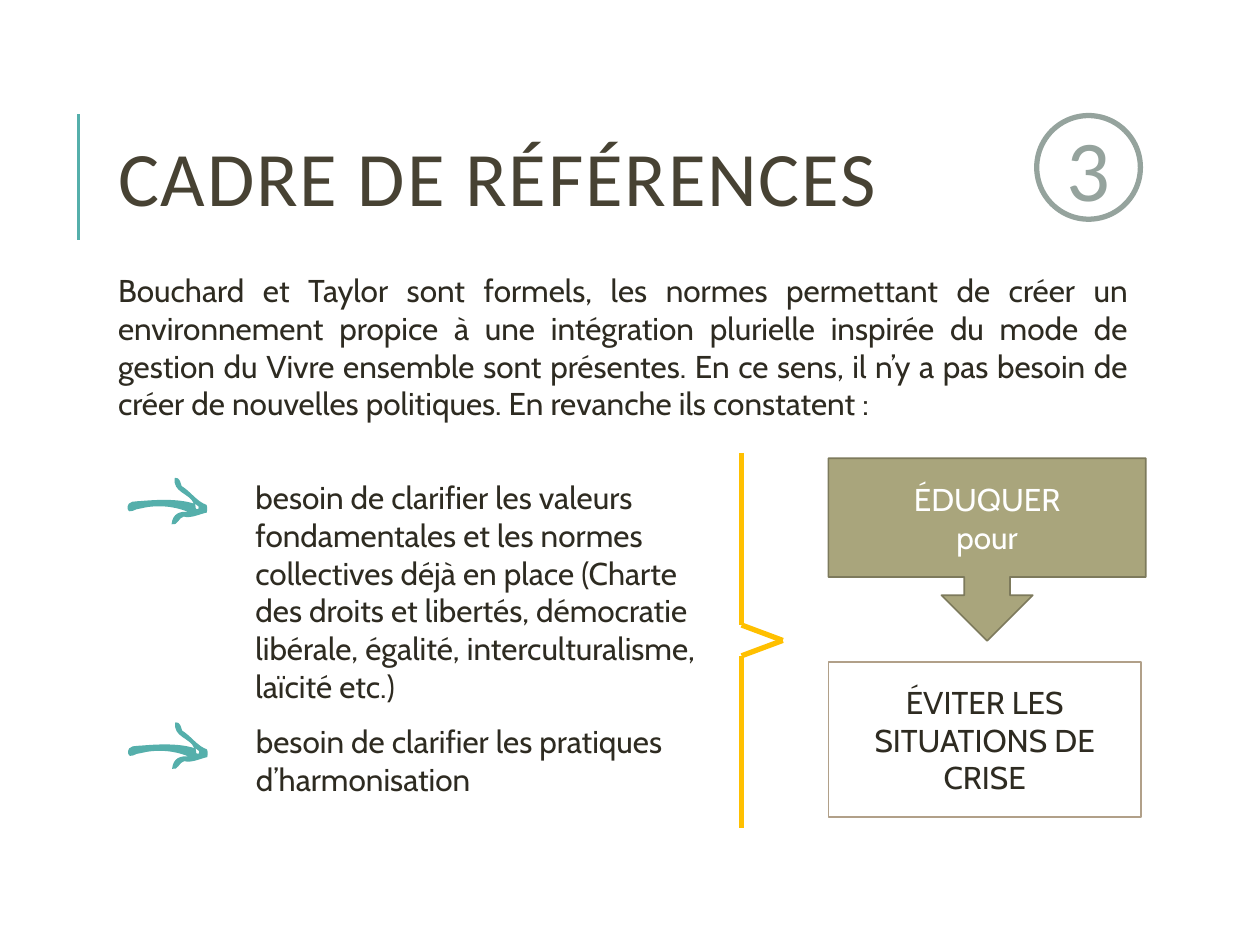
from lxml import etree
from pptx import Presentation
from pptx.dml.color import RGBColor
from pptx.enum import shapes, text
from pptx.oxml.ns import qn
from pptx.util import Cm, Pt

TEAL = RGBColor(0x55, 0xAF, 0xAB)
BROWN = RGBColor(0x47, 0x42, 0x33)
INK = RGBColor(0x2E, 0x2B, 0x21)
GREY = RGBColor(0x95, 0xA3, 0x9D)
AMBER = RGBColor(0xFF, 0xC0, 0x00)
OLIVE = RGBColor(0xA9, 0xA5, 0x7C)
DARK_OLIVE = RGBColor(0x7D, 0x7A, 0x5C)
SAND = RGBColor(0xB1, 0xA0, 0x89)
WHITE = RGBColor(0xFF, 0xFF, 0xFF)

# Hand-drawn arrow pointing up, on a grid 63 units high: each contour is a
# start point and its Bézier curves (two control points and an end point)
ARROW_HEIGHT = 63
ARROW_OUTLINE = ((25, 0), [
    ((27, 6), (31, 12), (30, 18)),
    ((31, 22), (38, 22), (37, 27)),
    ((28, 27), (26, 21), (26, 15)),
    ((22, 28), (23, 42), (27, 53)),
    ((27, 57), (33, 61), (28, 63)),
    ((21, 64), (22, 57), (21, 53)),
    ((19, 42), (16, 24), (19, 11)),
    ((11, 15), (12, 29), (0, 28)),
    ((-1, 24), (4, 23), (6, 22)),
    ((10, 14), (17, 9), (19, 1)),
    ((20, 0), (23, 0), (25, 0)),
])
ARROW_HOLE = ((19, 10), [
    ((20, 10), (22, 9), (23, 9)),
    ((23, 8), (23, 8), (23, 7)),
    ((22, 7), (21, 7), (21, 7)),
    ((21, 8), (19, 9), (19, 10)),
])


def write(sp, lines, size=18, font="Cabin", color=INK,
          align=text.PP_ALIGN.LEFT, anchor=text.MSO_ANCHOR.TOP):
    tf = sp.text_frame
    tf.word_wrap = True
    tf.vertical_anchor = anchor
    tf.text = "\n".join(lines)
    for p in tf.paragraphs:
        p.alignment = align
        p.font.size = Pt(size)
        p.font.name = font
        p.font.color.rgb = color
    return tf


def add_text(s, x, y, w, h, line, **style):
    sp = s.shapes.add_textbox(Cm(x), Cm(y), Cm(w), Cm(h))
    return write(sp, [line], **style)


def add_box(s, kind, x, y, w, h, fill, line, width, lines, **style):
    sp = s.shapes.add_shape(kind, Cm(x), Cm(y), Cm(w), Cm(h))
    sp.shadow.inherit = False
    sp.fill.solid()
    sp.fill.fore_color.rgb = fill
    sp.line.color.rgb = line
    sp.line.width = Pt(width)
    return write(sp, lines, align=text.PP_ALIGN.CENTER,
                 anchor=text.MSO_ANCHOR.MIDDLE, **style)


def add_line(s, start, end, color, width):
    cx = s.shapes.add_connector(shapes.MSO_CONNECTOR.STRAIGHT,
                                *map(Cm, start + end))
    cx.line.color.rgb = color
    cx.line.width = Pt(width)
    etree.SubElement(cx._element.spPr, qn("a:effectLst"))


def bend_segments(sp, curves):
    """Turn the straight segments of a freeform into the given curves."""
    for segment, points in zip(list(sp._element.iter(qn("a:lnTo"))), curves):
        segment.tag = qn("a:cubicBezTo")
        for child in list(segment):
            segment.remove(child)
        for x, y in points:
            etree.SubElement(segment, qn("a:pt"), x=str(x), y=str(y))


def add_arrow(s, x, y, h):
    (start, outline), (hole_start, hole) = ARROW_OUTLINE, ARROW_HOLE
    builder = s.shapes.build_freeform(*start, scale=Cm(h) / ARROW_HEIGHT)
    builder.add_line_segments([curve[-1] for curve in outline], close=True)
    builder.move_to(*hole_start)
    builder.add_line_segments([curve[-1] for curve in hole], close=True)
    sp = builder.convert_to_shape(Cm(x), Cm(y))
    bend_segments(sp, outline + hole)
    sp.rotation = 95.5
    sp.shadow.inherit = False
    sp.fill.solid()
    sp.fill.fore_color.rgb = TEAL
    sp.line.fill.background()


def add_header(s, x, y, w, h):
    add_line(s, (x, y + 3.2), (x, y + 0.66), TEAL, 1.5)
    tf = add_text(s, x + 0.55, y, 20.24, h, "CADRE DE RÉFÉRENCES", size=44,
                  font="Calibri", color=BROWN, anchor=text.MSO_ANCHOR.MIDDLE)
    p = tf.paragraphs[0]
    p.line_spacing = 0.8
    p.runs[0]._r.get_or_add_rPr().set("spc", "100")
    badge = 2.09
    tf = add_box(s, shapes.MSO_SHAPE.OVAL, x + w - badge, y + 0.7, badge, badge,
                 WHITE, GREY, 3, ["3"], size=49.5, font="Calibri", color=GREY)
    tf.margin_left = tf.margin_right = 0


def add_need(s, x, y, w, h, line):
    add_text(s, x + 2.33, y, w - 2.33, h, line)
    add_arrow(s, x + 0.35, y - 0.22, 1.6)


def add_bracket(s, x, y, w, h):
    middle, gap = y + h / 2, 0.31
    tip = (x + w, middle)
    upper, lower = (x, middle - gap), (x, middle + gap)
    for start, end in (((x, y), upper), (lower, (x, y + h)),
                       (upper, tip), (tip, lower)):
        add_line(s, start, end, AMBER, 3)


def add_conclusion(s, x, y, w, h):
    goal = 3.12
    add_box(s, shapes.MSO_SHAPE.RECTANGLE, x, y + h - goal, w - 0.1, goal,
            WHITE, SAND, 1, ["ÉVITER LES SITUATIONS DE CRISE"])
    add_box(s, shapes.MSO_SHAPE.DOWN_ARROW_CALLOUT, x, y, w, 3.68,
            OLIVE, DARK_OLIVE, 1, ["ÉDUQUER", "pour"], color=WHITE)


def main():
    prs = Presentation()
    prs.slide_width, prs.slide_height = Cm(25.4), Cm(19.05)
    s = prs.slides.add_slide(prs.slide_layouts[6])
    add_header(s, 1.58, 1.63, 21.41, 4.17)
    add_text(s, 2.13, 5.34, 20.86, 3.33,
             "Bouchard et Taylor sont formels, les normes permettant de créer un "
             "environnement propice à une intégration plurielle inspirée du mode "
             "de gestion du Vivre ensemble sont présentes. En ce sens, il n’y a "
             "pas besoin de créer de nouvelles politiques. En revanche ils "
             "constatent :", align=text.PP_ALIGN.JUSTIFY)
    add_need(s, 2.57, 9.51, 12.14, 4.88,
             "besoin de clarifier les valeurs fondamentales et les normes "
             "collectives déjà en place (Charte des droits et libertés, "
             "démocratie libérale, égalité, interculturalisme, laïcité etc.)")
    add_need(s, 2.58, 14.44, 11.69, 1.8,
             "besoin de clarifier les pratiques d’harmonisation")
    add_bracket(s, 14.95, 9.13, 0.83, 7.56)
    add_conclusion(s, 16.7, 9.24, 6.4, 7.23)
    prs.save("out.pptx")


if __name__ == "__main__":
    main()
